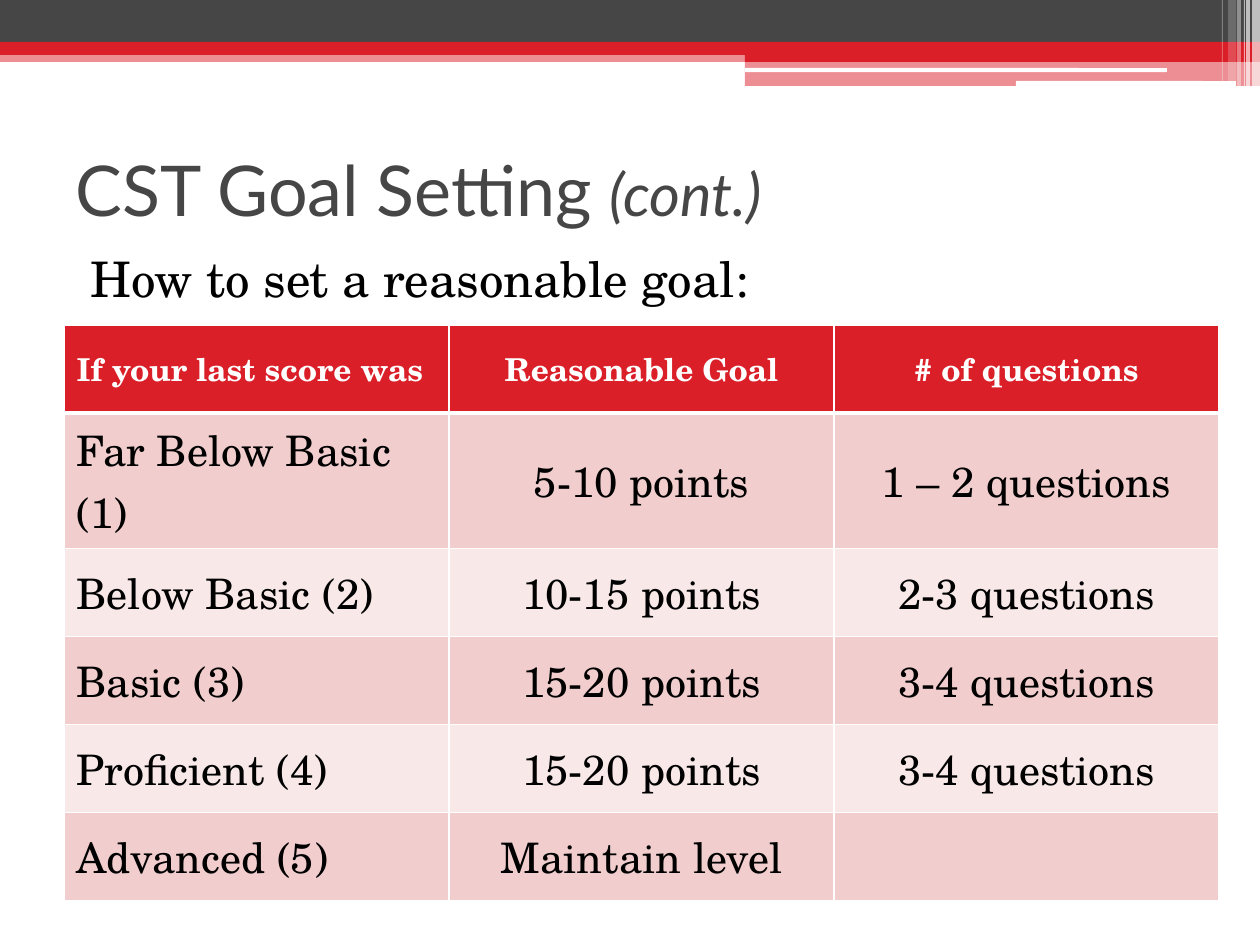
from lxml import etree
from pptx import Presentation
from pptx import util as u
from pptx.dml.color import RGBColor
from pptx.enum import shapes, text
from pptx.oxml.ns import qn

PX = 914400 / 126  # EMU per pixel
HEAD_FONT, BODY_FONT = "Lato", "TeX Gyre Schola"
RED = RGBColor(0xDA, 0x1F, 0x28)
GRAY = RGBColor(0x46, 0x46, 0x46)
WHITE = RGBColor(0xFF, 0xFF, 0xFF)
BLACK = RGBColor(0, 0, 0)
BANDS = RGBColor(0xF1, 0xCD, 0xCD), RGBColor(0xF8, 0xE8, 0xE8)

RECT = shapes.MSO_SHAPE.RECTANGLE
ROUND = shapes.MSO_SHAPE.ROUNDED_RECTANGLE

# Header bars: kind, left, top, width, height, colour, opacity in percent
BARS = [
    (RECT, 0, 50, 1260, 12, RED, 50),
    (RECT, 0, 0, 1260, 43, GRAY, 100),
    (RECT, 0, 42, 1260, 13, RED, 100),
    (RECT, 745, 49, 515, 13, RED, 100),
    (RECT, 745, 61, 515, 25, RED, 50),
    (ROUND, 745, 68, 422, 4, WHITE, 100),
    (ROUND, 1016, 81, 220, 5, WHITE, 100),
]
# Stripes at the right end: left, width, height, opacity
STRIPES = [
    (1252, 8, 86, 65), (1246, 4, 86, 65), (1244, 1, 86, 60),
    (1237, 4, 86, 40), (1228, 8, 81, 20), (1222, 1, 81, 30),
]
ROWS = [
    ("If your last score was", "Reasonable Goal", "# of questions"),
    ("Far Below Basic (1)", "5-10 points", "1 – 2 questions"),
    ("Below Basic (2)", "10-15 points", "2-3 questions"),
    ("Basic (3)", "15-20 points", "3-4 questions"),
    ("Proficient (4)", "15-20 points", "3-4 questions"),
    ("Advanced (5)", "Maintain level", ""),
]


def px(*lengths):
    return [u.Emu(round(n * PX)) for n in lengths]


def style(font, name, size, color, bold=False):
    font.name, font.size, font.bold = name, u.Pt(size), bold
    font.color.rgb = color


def add_bar(s, kind, left, top, width, height, color, opacity):
    sp = s.shapes.add_shape(kind, *px(left, top, width, height))
    sp.shadow.inherit = False
    sp.fill.solid()
    sp.fill.fore_color.rgb = color
    sp.line.fill.background()
    if opacity < 100:
        clr = sp.fill._xPr.find(".//" + qn("a:srgbClr"))
        etree.SubElement(clr, qn("a:alpha"), val=str(opacity * 1000))


def place(sp, *box):
    sp.left, sp.top, sp.width, sp.height = px(*box)
    return sp.text_frame


def fill_title(sp):
    tf = place(sp, 63, 126, 1134, 126)
    tf.vertical_anchor = text.MSO_ANCHOR.MIDDLE
    p = tf.paragraphs[0]
    p.alignment = text.PP_ALIGN.LEFT
    style(p.font, HEAD_FONT, 40, GRAY)
    p.add_run().text = "CST Goal Setting "
    r = p.add_run()
    r.text = "(cont.)"
    r.font.size, r.font.italic = u.Pt(34), True


def fill_body(sp):
    tf = place(sp, 63, 242, 1134, 664)
    p = tf.paragraphs[0]
    p.text = "How to set a reasonable goal:"
    p.space_before = u.Pt(3)
    style(p.font, BODY_FONT, 28, BLACK)
    pPr = p._p.get_or_add_pPr()
    pPr.set("marL", str(u.Inches(0.4)))
    pPr.set("indent", str(u.Inches(-0.28)))
    pPr.insert_element_before(etree.Element(qn("a:buNone")), "a:defRPr")


def set_borders(cell, bottom):
    tcPr = cell._tc.get_or_add_tcPr()
    for i, (side, width) in enumerate(
            [("lnL", 1), ("lnR", 1), ("lnT", 1), ("lnB", bottom)]):
        ln = etree.Element(qn("a:" + side), w=str(u.Pt(width)))
        fill = etree.SubElement(ln, qn("a:solidFill"))
        etree.SubElement(fill, qn("a:srgbClr"), val=str(WHITE))
        tcPr.insert(i, ln)


def add_goal_table(s):
    tbl = s.shapes.add_table(len(ROWS), 3, *px(64, 325, 1155, 528)).table
    for i, row in enumerate(ROWS):
        header = i == 0
        for j, value in enumerate(row):
            cell = tbl.cell(i, j)
            cell.vertical_anchor = text.MSO_ANCHOR.MIDDLE
            cell.fill.solid()
            cell.fill.fore_color.rgb = RED if header else BANDS[(i - 1) % 2]
            # The thick rule belongs to both cells that meet at it
            set_borders(cell, 3 if header else 1)
            if i == 1:
                cell._tc.tcPr.find(qn("a:lnT")).set("w", str(u.Pt(3)))
            p = cell.text_frame.paragraphs[0]
            p.text = value
            p.alignment = text.PP_ALIGN.CENTER if j else text.PP_ALIGN.LEFT
            style(p.font, BODY_FONT, 18 if header else 24,
                  WHITE if header else BLACK, header)


def main():
    prs = Presentation()
    prs.slide_width, prs.slide_height = px(1260, 945)
    s = prs.slides.add_slide(prs.slide_layouts[1])

    # Header decoration
    for bar in BARS:
        add_bar(s, *bar)
    for left, width, height, opacity in STRIPES:
        add_bar(s, RECT, left, 0, width, height, WHITE, opacity)

    # Content
    fill_title(s.shapes.title)
    fill_body(s.placeholders[1])
    add_goal_table(s)
    prs.save("out.pptx")


if __name__ == "__main__":
    main()
